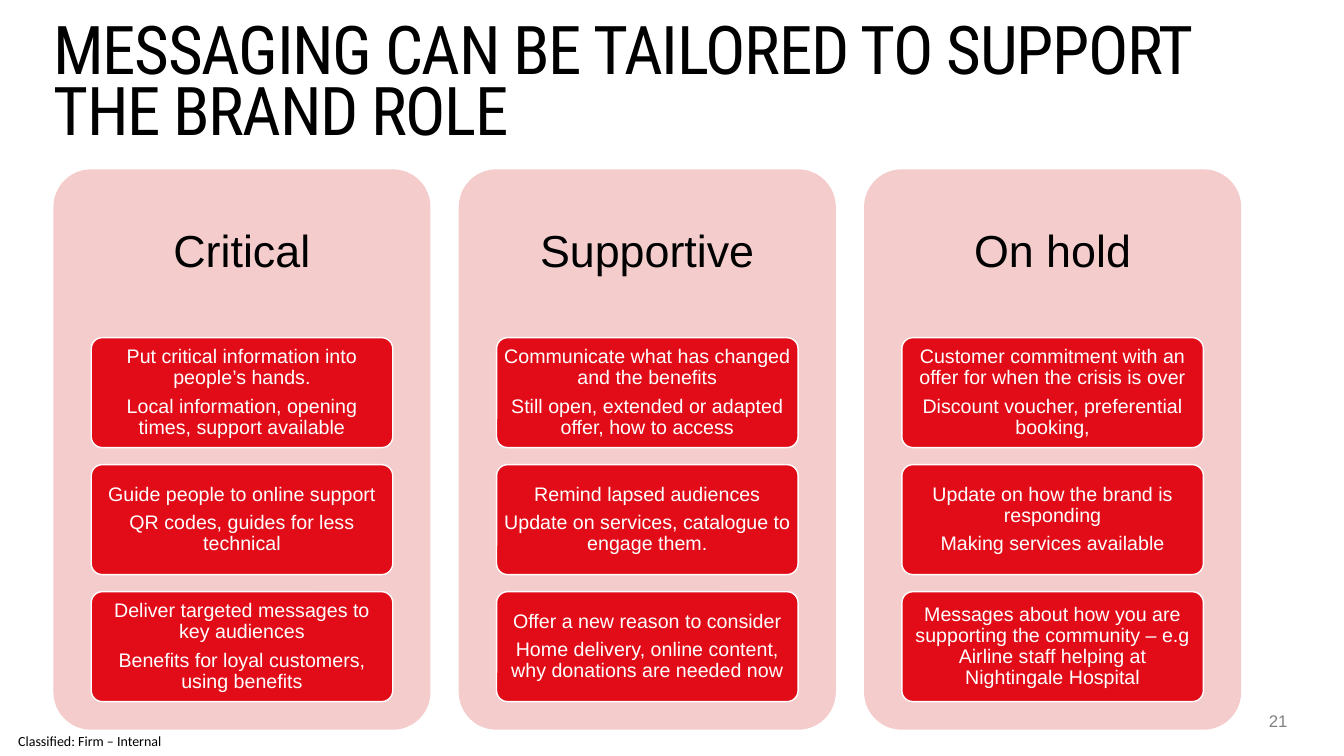
from dataclasses import dataclass
from typing import Any

from pptx import Presentation
from pptx.dml.color import RGBColor
from pptx.enum.shapes import MSO_SHAPE as Preset
from pptx.enum.text import MSO_ANCHOR as Anchor, MSO_AUTO_SIZE as AutoSize, PP_ALIGN as Align
from pptx.util import Inches, Pt

PANEL_LEFT, PANEL_TOP, PANEL_WIDTH, PANEL_HEIGHT = 0.53, 1.68, 3.74, 5.56
PANEL_PITCH = 4.02
HEADING_HEIGHT = 1.67
CARD_TOP, CARD_WIDTH, CARD_HEIGHT, CARD_PITCH = 3.35, 2.99, 1.09, 1.26


@dataclass(frozen=True)
class Box:
    left: float
    top: float
    width: float
    height: float

    def lengths(self) -> list[int]:
        return [Inches(side) for side in (self.left, self.top, self.width, self.height)]


@dataclass(frozen=True)
class TextStyle:
    size: float
    color: str
    font: str = "Arial"
    align: Align = Align.CENTER
    anchor: Anchor = Anchor.MIDDLE
    spacing: Any = 0.9
    inset_x: float = 0
    inset_y: float = 0


@dataclass(frozen=True)
class Role:
    heading: str
    cards: list[list[str]]


TITLE = TextStyle(48, "000000", "Roboto Condensed", Align.LEFT, Anchor.TOP, Pt(44))
HEADING = TextStyle(32, "000000", inset_x=0.13, inset_y=0.13)
CARD = TextStyle(14, "FFFFFF", inset_x=0.04, inset_y=0.03)
NUMBER = TextStyle(12, "808080", align=Align.RIGHT, anchor=Anchor.TOP, spacing=1.0)
MARKING = TextStyle(10, "000000", "Calibri", spacing=1.0)

ROLES = [
    Role("Critical", [
        ["Put critical information into people’s hands.",
         "Local information, opening times, support available"],
        ["Guide people to online support", "QR codes, guides for less technical"],
        ["Deliver targeted messages to key audiences",
         "Benefits for loyal customers, using benefits"],
    ]),
    Role("Supportive", [
        ["Communicate what has changed and the benefits",
         "Still open, extended or adapted offer, how to access"],
        ["Remind lapsed audiences", "Update on services, catalogue to engage them."],
        ["Offer a new reason to consider",
         "Home delivery, online content, why donations are needed now"],
    ]),
    Role("On hold", [
        ["Customer commitment with an offer for when the crisis is over",
         "Discount voucher, preferential booking,"],
        ["Update on how the brand is responding", "Making services available"],
        ["Messages about how you are supporting the community – e.g "
         "Airline staff helping at Nightingale Hospital"],
    ]),
]


def rgb(color: str) -> RGBColor:
    return RGBColor.from_string(color)


def apply(target: Any, values: dict[str, Any]) -> None:
    for name, value in values.items():
        setattr(target, name, value)


def write(shape: Any, lines: list[str], style: TextStyle) -> None:
    frame = shape.text_frame
    apply(frame, {
        "word_wrap": True,
        "auto_size": AutoSize.NONE,
        "vertical_anchor": style.anchor,
        "margin_left": Inches(style.inset_x),
        "margin_right": Inches(style.inset_x),
        "margin_top": Inches(style.inset_y),
        "margin_bottom": Inches(style.inset_y),
    })
    for index, line in enumerate(lines):
        para = frame.add_paragraph() if index else frame.paragraphs[0]
        apply(para, {
            "alignment": style.align,
            "line_spacing": style.spacing,
            "space_before": Pt(5 if index else 0),
        })
        span = para.add_run()
        span.text = line
        apply(span.font, {"name": style.font, "size": Pt(style.size), "bold": False})
        span.font.color.rgb = rgb(style.color)


def add_text(page: Any, box: Box, line: str, style: TextStyle) -> None:
    write(page.shapes.add_textbox(*box.lengths()), [line], style)


def add_rounded(page: Any, box: Box, fill: str, outline: str = "") -> Any:
    shape = page.shapes.add_shape(Preset.ROUNDED_RECTANGLE, *box.lengths())
    shape.adjustments[0] = 0.1
    shape.shadow.inherit = False
    shape.fill.solid()
    shape.fill.fore_color.rgb = rgb(fill)
    if outline:
        shape.line.color.rgb = rgb(outline)
        shape.line.width = Pt(1)
    else:
        shape.line.fill.background()
    return shape


def add_title(page: Any, box: Box, line: str) -> None:
    title = page.shapes.title
    apply(title, dict(zip(("left", "top", "width", "height"), box.lengths())))
    write(title, [line], TITLE)
    for span in title.text_frame.paragraphs[0].runs:
        span.font._element.set("spc", "-100")


def add_role(page: Any, left: float, role: Role) -> None:
    add_rounded(page, Box(left, PANEL_TOP, PANEL_WIDTH, PANEL_HEIGHT), "F4CCCC")
    add_text(page, Box(left, PANEL_TOP, PANEL_WIDTH, HEADING_HEIGHT), role.heading, HEADING)
    card_left = left + (PANEL_WIDTH - CARD_WIDTH) / 2
    for row, lines in enumerate(role.cards):
        box = Box(card_left, CARD_TOP + row * CARD_PITCH, CARD_WIDTH, CARD_HEIGHT)
        write(add_rounded(page, box, "E20C18", "FFFFFF"), lines, CARD)


def main() -> None:
    deck = Presentation()
    apply(deck, {"slide_width": Inches(13.33), "slide_height": Inches(7.5)})
    page = deck.slides.add_slide(deck.slide_layouts[5])
    add_text(page, Box(0, 7.21, 1.78, 0.29), "Classified: Firm – Internal", MARKING)
    add_title(page, Box(0.53, 0.26, 12.2, 0.52),
              "MESSAGING CAN BE TAILORED TO SUPPORT THE BRAND ROLE")
    add_text(page, Box(12.3, 7.05, 0.47, 0.2), "21", NUMBER)
    for column, role in enumerate(ROLES):
        add_role(page, PANEL_LEFT + column * PANEL_PITCH, role)
    deck.save("out.pptx")


if __name__ == "__main__":
    main()
